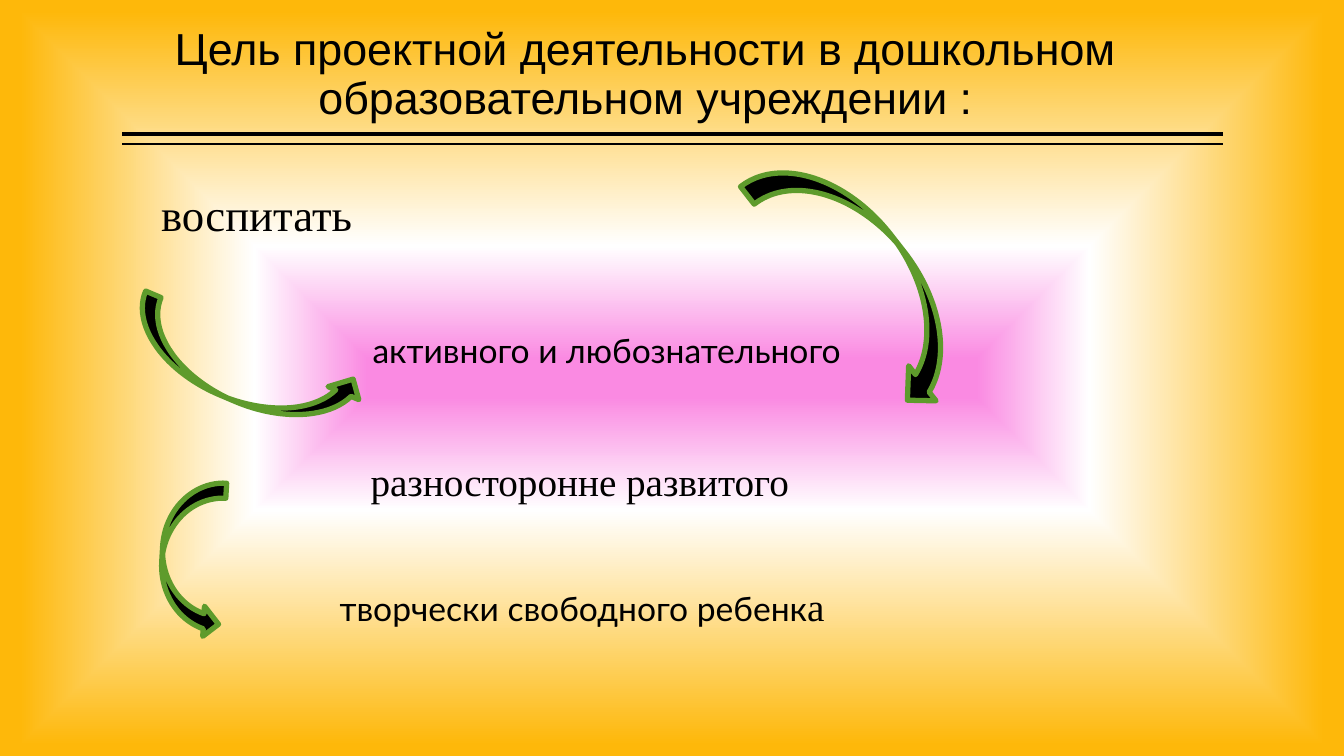
from dataclasses import dataclass

from lxml import etree
from pptx import Presentation
from pptx import util as u
from pptx.dml.color import RGBColor
from pptx.enum import shapes, text
from pptx.oxml import parse_xml
from pptx.oxml.ns import nsdecls, qn


@dataclass(frozen=True)
class Theme:
    ink: str = "000000"
    arrow_edge: str = "5E9B2C"
    glow: tuple = ((5, "FA8AE2"), (35, "FFFFFF"), (97, "FEB80A"))
    sans: str = "Arial"
    humanist: str = "Lato"
    serif: str = "Times New Roman"
    large: int = 32
    medium: int = 28
    small: int = 24
    edge_width: float = 3.78


class GoalSlide:
    def __init__(self, deck, theme):
        self.theme = theme
        self.slide = deck.slides.add_slide(deck.slide_layouts[6])

    def background(self):
        """Rectangular glow spreading from the slide centre."""
        fill = self.slide.background.fill
        fill.solid()
        fill.fore_color.rgb = RGBColor.from_string(self.theme.ink)
        stops = "".join(
            f'<a:gs pos="{percent * 1000}"><a:srgbClr val="{color}"/></a:gs>'
            for percent, color in self.theme.glow)
        glow = parse_xml(
            f'<a:gradFill {nsdecls("a")} rotWithShape="1"><a:gsLst>{stops}</a:gsLst>'
            '<a:path path="shape"><a:fillToRect l="50000" t="50000" '
            'r="50000" b="50000"/></a:path></a:gradFill>')
        properties = self.slide.element.find(".//" + qn("p:bgPr"))
        properties.replace(properties.find(qn("a:solidFill")), glow)

    def rule(self, y, weight):
        line = self.slide.shapes.add_connector(
            shapes.MSO_CONNECTOR.STRAIGHT,
            u.Cm(30.81), u.Cm(y), u.Cm(3.07), u.Cm(y))
        line.line.color.rgb = RGBColor.from_string(self.theme.ink)
        line.line.width = u.Pt(weight)
        etree.SubElement(line.element.spPr, qn("a:effectLst"))

    def phrase(self, box, parts, wrap=True, align=text.PP_ALIGN.LEFT):
        """Text box; parts are (wording, font, size)."""
        frame = self.slide.shapes.add_textbox(*map(u.Cm, box)).text_frame
        frame.word_wrap = wrap
        paragraph = frame.paragraphs[0]
        paragraph.alignment = align
        for wording, font, size in parts:
            run = paragraph.add_run()
            run.text = wording
            run.font.name = font
            run.font.size = u.Pt(size)
            run.font.color.rgb = RGBColor.from_string(self.theme.ink)
        return frame

    def title(self, box, wording):
        frame = self.phrase(box, [(wording, self.theme.sans, self.theme.large)],
                            align=text.PP_ALIGN.CENTER)
        frame.vertical_anchor = text.MSO_ANCHOR.BOTTOM
        frame.margin_left = frame.margin_right = 0
        frame.paragraphs[0].line_spacing = 0.9

    def arrow(self, kind, box, rotation):
        arrow = self.slide.shapes.add_shape(kind, *map(u.Cm, box))
        arrow.rotation = rotation
        arrow.shadow.inherit = False
        arrow.fill.solid()
        arrow.fill.fore_color.rgb = RGBColor.from_string(self.theme.ink)
        arrow.line.color.rgb = RGBColor.from_string(self.theme.arrow_edge)
        arrow.line.width = u.Pt(self.theme.edge_width)


def main():
    deck = Presentation()
    deck.slide_width, deck.slide_height = u.Cm(33.87), u.Cm(19.05)
    theme = Theme()
    goal = GoalSlide(deck, theme)

    # Background and double rule under the heading
    goal.background()
    goal.rule(3.38, 3)
    goal.rule(3.63, 1)

    # Heading
    goal.title((1.73, 0.2, 29.08, 3.05),
               "Цель проектной деятельности в дошкольном образовательном учреждении :")

    # Qualities of the child
    goal.phrase((3.81, 4.57, 5.38, 1.63),
                [("воспитать", theme.serif, theme.large)], wrap=False)
    goal.phrase((9.14, 8.18, 12.67, 1.27),
                [("активного и любознательного", theme.humanist, theme.small)],
                wrap=False)
    goal.phrase((9.09, 11.4, 11.07, 1.45),
                [("разносторонне развитого", theme.serif, theme.medium)])
    goal.phrase((8.31, 14.55, 15.6, 1.45),
                [("творчески свободного ребенк", theme.humanist, theme.small),
                 ("а", theme.serif, theme.medium)],
                align=text.PP_ALIGN.JUSTIFY)

    # Arrows leading from one quality to the next
    kinds = shapes.MSO_SHAPE
    goal.arrow(kinds.CURVED_UP_ARROW, (3.1, 8.46, 6.1, 1.68), 23)
    goal.arrow(kinds.CURVED_LEFT_ARROW, (20.7, 3.23, 2.24, 7.39), 322)
    goal.arrow(kinds.CURVED_UP_ARROW, (2.87, 13.34, 3.94, 1.52), 93.3)

    deck.save("out.pptx")


if __name__ == "__main__":
    main()
